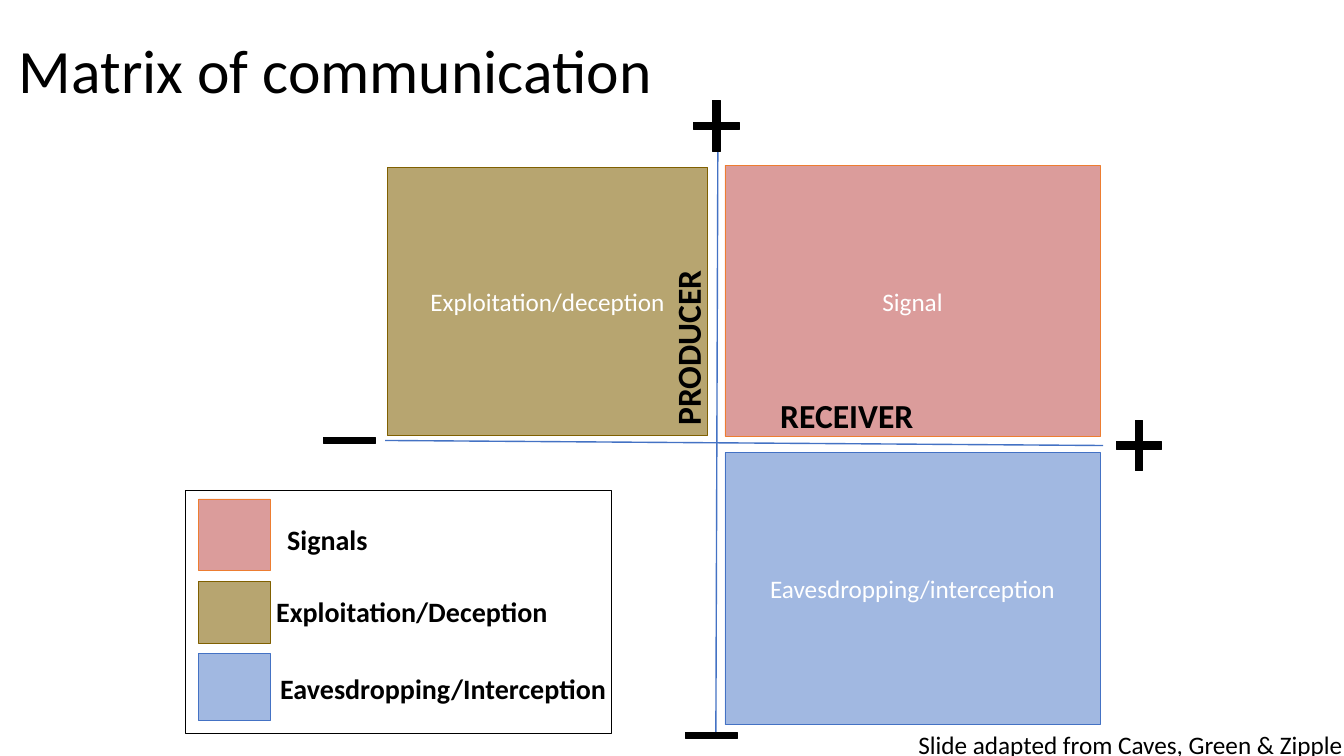
from dataclasses import dataclass

from lxml.etree import SubElement
from pptx import Presentation
from pptx.dml.color import RGBColor
from pptx.enum.shapes import MSO_CONNECTOR, MSO_SHAPE
from pptx.enum.text import MSO_ANCHOR, PP_ALIGN
from pptx.oxml.ns import qn
from pptx.util import Inches, Pt

COLORS = {
    "black": "000000",
    "white": "FFFFFF",
    "red": "C0504D",
    "orange": "ED7D31",
    "olive": "806000",
    "blue": "4472C4",
}


@dataclass
class Category:
    fill: str
    line: str
    opacity: int
    quadrant: tuple
    quadrant_text: str
    swatch_top: float
    swatch_height: float
    legend: tuple
    legend_text: str


@dataclass
class Label:
    text: str
    frame: tuple
    size: int
    bold: bool = True
    rotation: int = 0
    wrap: bool = True
    anchor: MSO_ANCHOR = MSO_ANCHOR.TOP
    line_spacing: float = 1.0


@dataclass
class Sign:
    kind: MSO_SHAPE
    frame: tuple


CATEGORIES = [
    Category("red", "orange", 56, (7.19, 1.64, 3.72, 2.69), "Signal",
             4.95, 0.71, (2.75, 5.13, 2.51, 0.44), "Signals"),
    Category("olive", "olive", 56, (3.84, 1.66, 3.18, 2.66), "Exploitation/deception",
             5.77, 0.61, (2.64, 5.85, 3.42, 0.44), "Exploitation/Deception"),
    Category("blue", "blue", 50, (7.19, 4.49, 3.72, 2.7), "Eavesdropping/interception",
             6.48, 0.67, (2.68, 6.61, 4.03, 0.44), "Eavesdropping/Interception"),
]
AXES = [(7.12, 1.48, 7.1, 7.29), (3.82, 4.37, 10.94, 4.42)]
SIGNS = [
    Sign(MSO_SHAPE.MATH_PLUS, (6.8, 0.91, 0.61, 0.68)),
    Sign(MSO_SHAPE.MATH_MINUS, (3.12, 4.24, 0.69, 0.25)),
    Sign(MSO_SHAPE.MATH_PLUS, (10.99, 4.08, 0.61, 0.68)),
    Sign(MSO_SHAPE.MATH_MINUS, (6.71, 7.17, 0.69, 0.25)),
]
LABELS = [
    Label("RECEIVER", (7.64, 3.87, 2.94, 0.5), 24),
    Label("PRODUCER", (5.47, 2.72, 2.7, 0.5), 24, rotation=270),
    Label("Matrix of communication", (0.09, 0, 11.5, 1.45), 44, bold=False,
          anchor=MSO_ANCHOR.MIDDLE, line_spacing=0.9),
    Label("Slide adapted from Caves, Green & Zipple", (9.01, 7.19, 4.56, 0.4), 18,
          bold=False, wrap=False),
]


def rgb(name: str) -> RGBColor:
    return RGBColor.from_string(COLORS[name])


def set_all(target, values: dict) -> None:
    for name, value in values.items():
        setattr(target, name, value)


def write(box, text: str, size: int, color: str, bold: bool = False):
    para = box.text_frame.paragraphs[0]
    span = para.add_run()
    set_all(span, {"text": text})
    set_all(span.font, {"name": "Calibri", "size": Pt(size), "bold": bold})
    span.font.color.rgb = rgb(color)
    return para


def add_box(page, kind: MSO_SHAPE, frame: tuple, line: str,
            fill: str | None = None, opacity: int = 100):
    box = page.shapes.add_shape(kind, *map(Inches, frame))
    box.shadow.inherit = False
    set_all(box.line, {"width": Pt(0.5)})
    box.line.color.rgb = rgb(line)
    if fill is None:
        box.fill.background()
        return box
    box.fill.solid()
    box.fill.fore_color.rgb = rgb(fill)
    if opacity < 100:
        color = box._element.spPr.find(qn("a:solidFill"))[0]
        SubElement(color, qn("a:alpha")).set("val", str(opacity * 1000))
    return box


def add_label(page, label: Label) -> None:
    box = page.shapes.add_textbox(*map(Inches, label.frame))
    box.rotation = label.rotation
    set_all(box.text_frame, {"word_wrap": label.wrap, "vertical_anchor": label.anchor})
    para = write(box, label.text, label.size, "black", label.bold)
    para.line_spacing = label.line_spacing


def add_axis(page, ends: tuple) -> None:
    axis = page.shapes.add_connector(MSO_CONNECTOR.STRAIGHT, *map(Inches, ends))
    axis.line.color.rgb = rgb("blue")
    axis.line.width = Pt(1)
    SubElement(axis._element.spPr, qn("a:effectLst"))


def add_quadrant(page, category: Category) -> None:
    box = add_box(page, MSO_SHAPE.RECTANGLE, category.quadrant,
                  category.line, category.fill, category.opacity)
    set_all(box.text_frame, {"word_wrap": True, "vertical_anchor": MSO_ANCHOR.MIDDLE})
    para = write(box, category.quadrant_text, 18, "white")
    para.alignment = PP_ALIGN.CENTER


def add_legend_entry(page, category: Category) -> None:
    swatch = (1.97, category.swatch_top, 0.71, category.swatch_height)
    add_box(page, MSO_SHAPE.RECTANGLE, swatch,
            category.line, category.fill, category.opacity)
    add_label(page, Label(category.legend_text, category.legend, 20))


def add_sign(page, sign: Sign) -> None:
    box = add_box(page, sign.kind, sign.frame, "black", "black")
    if sign.kind == MSO_SHAPE.MATH_PLUS:
        box.adjustments[0] = 0.121


def main() -> None:
    deck = Presentation()
    set_all(deck, {"slide_width": Inches(13.33), "slide_height": Inches(7.5)})
    page = deck.slides.add_slide(deck.slide_layouts[6])

    # Axes and quadrants
    for ends in AXES:
        add_axis(page, ends)
    for category in CATEGORIES:
        add_quadrant(page, category)

    # Legend
    for category in CATEGORIES:
        add_legend_entry(page, category)
    add_box(page, MSO_SHAPE.RECTANGLE, (1.84, 4.86, 4.22, 2.42), "black")

    # Axis signs, axis names, title and credit
    for sign in SIGNS:
        add_sign(page, sign)
    for label in LABELS:
        add_label(page, label)

    deck.save("out.pptx")


if __name__ == "__main__":
    main()
